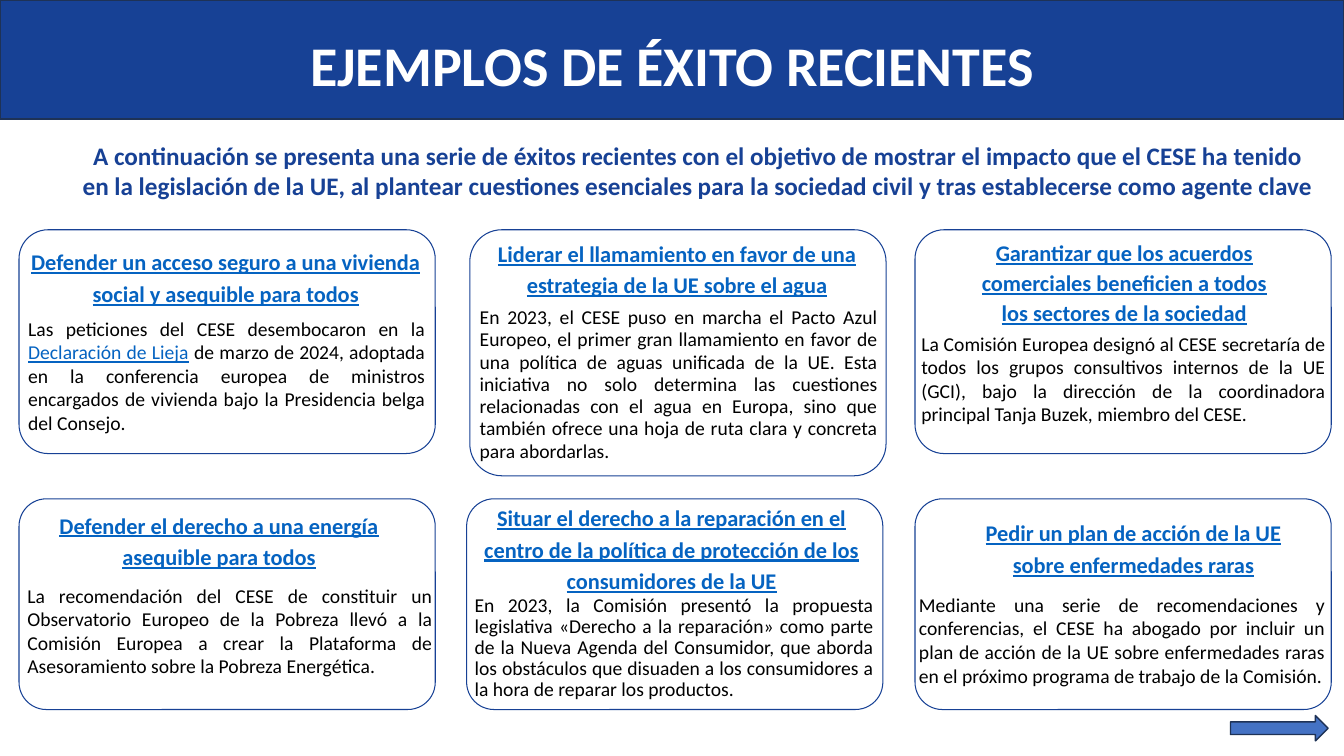
from dataclasses import dataclass

from pptx import Presentation
from pptx import util as u
from pptx.dml.color import RGBColor
from pptx.enum import shapes, text


@dataclass(frozen=True)
class Theme:
    """Colours, font and type sizes of the slide."""
    font: str = "Calibri"
    navy: str = "174195"
    edge: str = "1E3256"
    arrow: str = "4472C4"
    link: str = "0563C1"
    ink: str = "000000"
    white: str = "FFFFFF"
    title: int = 40
    intro: int = 18
    head: int = 16
    body: int = 14


class Deck:
    """Draws styled elements on the current slide."""

    def __init__(self, theme):
        self.theme = theme
        self.prs = Presentation()
        self.prs.slide_width = u.Cm(33.87)
        self.prs.slide_height = u.Cm(19.05)
        self.slide = self.prs.slides.add_slide(self.prs.slide_layouts[6])

    def shape(self, kind, box, line, width, fill=None):
        """Add a preset shape with a line and an optional fill."""
        item = self.slide.shapes.add_shape(kind, *map(u.Cm, box))
        item.shadow.inherit = False
        if fill:
            item.fill.solid()
            item.fill.fore_color.rgb = RGBColor.from_string(fill)
        else:
            item.fill.background()
        item.line.color.rgb = RGBColor.from_string(line)
        item.line.width = u.Pt(width)
        return item

    def card(self, box):
        """Add an empty card with round corners."""
        item = self.shape(shapes.MSO_SHAPE.ROUNDED_RECTANGLE, box, self.theme.navy, 0.75)
        item.adjustments[0] = 0.13

    def text(self, box, words, size, color, align="CENTER", lead=None, bold=True,
             line=False, pad=0):
        """Add wrapped text, where bars enclose a link."""
        item = self.slide.shapes.add_textbox(*map(u.Cm, box))
        frame = item.text_frame
        frame.word_wrap = True
        frame.auto_size = text.MSO_AUTO_SIZE.SHAPE_TO_FIT_TEXT
        frame.margin_left = frame.margin_right = u.Cm(pad)
        frame.margin_top = frame.margin_bottom = u.Cm(pad / 2)
        for i, part in enumerate(words.split("\n")):
            para = frame.add_paragraph() if i else frame.paragraphs[0]
            para.alignment = text.PP_ALIGN[align]
            if lead:
                para.line_spacing = u.Pt(lead)
            font = para.font
            font.name, font.size, font.bold = self.theme.font, u.Pt(size), bold
            font.color.rgb = RGBColor.from_string(color)
            for j, bit in enumerate(part.split("|")):
                run = para.add_run()
                run.text = bit
                run.font.name, run.font.size, run.font.bold = font.name, font.size, bold
                linked = line or j % 2 == 1
                run.font.underline = linked
                tint = self.theme.link if linked else color
                run.font.color.rgb = RGBColor.from_string(tint)

    def head(self, spot, words, lead=22.4):
        """Add the linked heading of a card."""
        self.text((*spot, 1.5), words, self.theme.head, self.theme.link, lead=lead, line=True)

    def body(self, spot, words, lead=16.8):
        """Add the justified text of a card."""
        self.text((*spot, 2.4), words, self.theme.body, self.theme.ink, "JUSTIFY", lead, False)


CARDS = [
    ((0.48, 5.79, 10.49, 5.64),
     ((0.56, 6.15, 10.26), "Defender un acceso seguro a una vivienda social y asequible para todos"),
     ((0.71, 7.98, 10.01), "Las peticiones del CESE desembocaron en la |Declaración de Lieja| de marzo "
      "de 2024, adoptada en la conferencia europea de ministros encargados de vivienda bajo la "
      "Presidencia belga del Consejo.", None)),
    ((11.84, 5.79, 10.49, 6.2),
     ((12.19, 5.94, 9.75), "Liderar el llamamiento en favor de una estrategia de la UE sobre el agua"),
     ((12.09, 7.72, 10.03), "En 2023, el CESE puso en marcha el Pacto Azul Europeo, el primer gran "
      "llamamiento en favor de una política de aguas unificada de la UE. Esta iniciativa no solo "
      "determina las cuestiones relacionadas con el agua en Europa, sino que también ofrece una "
      "hoja de ruta clara y concreta para abordarlas.", 15.9)),
    ((23.06, 5.79, 10.49, 5.64),
     ((24.36, 5.94, 7.95), "Garantizar que los acuerdos comerciales beneficien a todos los sectores "
      "de la sociedad", 21.5),
     ((23.22, 8.36, 10.19), "La Comisión Europea designó al CESE secretaría de todos los grupos "
      "consultivos internos de la UE (GCI), bajo la dirección de la coordinadora principal Tanja "
      "Buzek, miembro del CESE.")),
    ((0.48, 12.57, 10.49, 5.31),
     ((0.91, 12.78, 9.22), "Defender el derecho a una energía asequible para todos"),
     ((0.69, 14.71, 10.21), "La recomendación del CESE de constituir un Observatorio Europeo de la "
      "Pobreza llevó a la Comisión Europea a crear la Plataforma de Asesoramiento sobre la Pobreza "
      "Energética.")),
    ((11.76, 12.57, 10.49, 5.31),
     ((11.73, 12.6, 10.39), "Situar el derecho a la reparación en el centro de la política de "
      "protección de los consumidores de la UE"),
     ((11.96, 15.01, 10.06), "En 2023, la Comisión presentó la propuesta legislativa «Derecho a la "
      "reparación» como parte de la Nueva Agenda del Consumidor, que aborda los obstáculos que "
      "disuaden a los consumidores a la hora de reparar los productos.", 14.9)),
    ((23.06, 12.57, 10.49, 5.31),
     ((23.27, 12.98, 10.59), "Pedir un plan de acción de la UE\nsobre enfermedades raras"),
     ((23.16, 14.94, 10.24), "Mediante una serie de recomendaciones y conferencias, el CESE ha "
      "abogado por incluir un plan de acción de la UE sobre enfermedades raras en el próximo "
      "programa de trabajo de la Comisión.")),
]


def main():
    """Build and save the slide."""
    theme = Theme()
    deck = Deck(theme)
    deck.shape(shapes.MSO_SHAPE.RECTANGLE, (0, 0, 33.87, 3), theme.edge, 1, theme.navy)
    deck.text((0, 1.3, 33.87, 1.3), "EJEMPLOS DE ÉXITO RECIENTES", theme.title, theme.white, lead=33)
    deck.text((1.7, 3.4, 31.78, 1.8), "A continuación se presenta una serie de éxitos recientes con el "
              "objetivo de mostrar el impacto que el CESE ha tenido en la legislación de la UE, al "
              "plantear cuestiones esenciales para la sociedad civil y tras establecerse como agente "
              "clave", theme.intro, theme.navy, pad=0.25)
    for box, head, body in CARDS:
        deck.card(box)
        deck.head(*head)
        deck.body(*body)
    deck.shape(shapes.MSO_SHAPE.RIGHT_ARROW, (31.01, 18.03, 2.46, 0.64), theme.edge, 1, theme.arrow)
    deck.prs.save("out.pptx")


if __name__ == "__main__":
    main()
